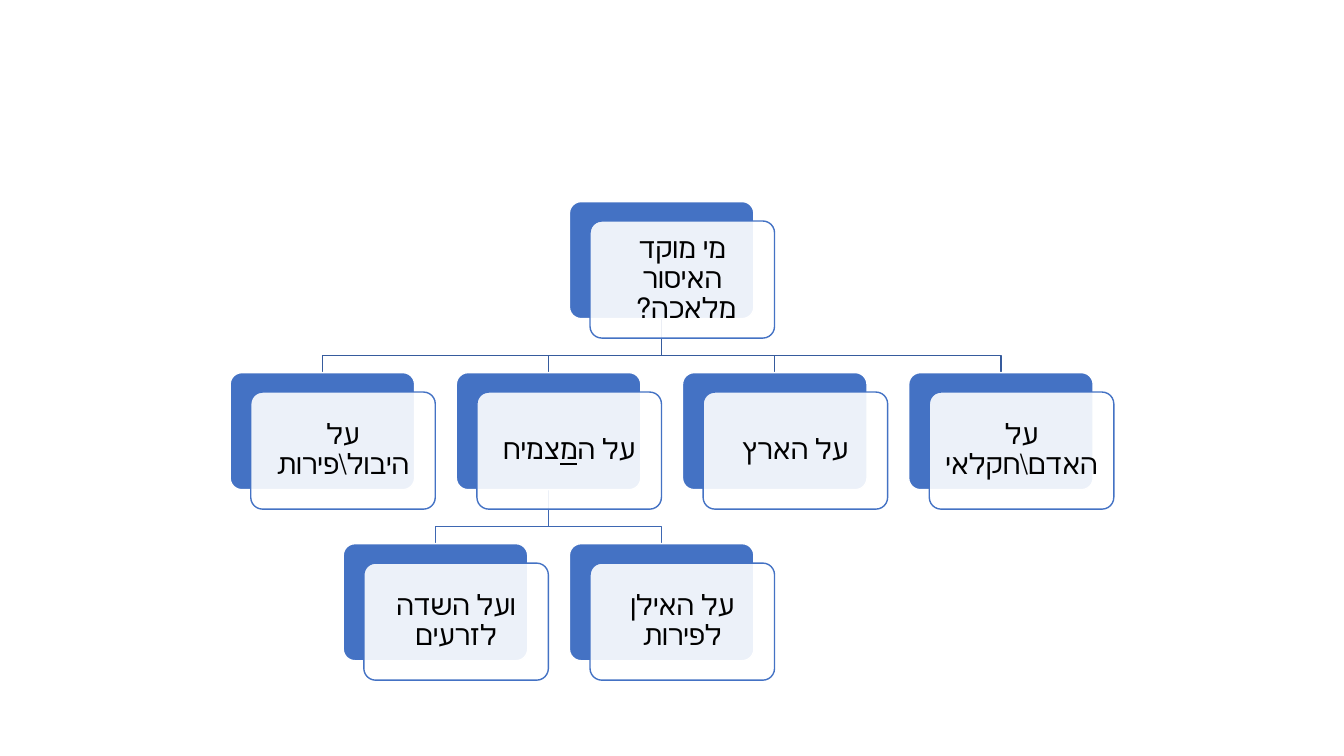
"""Build a Hebrew tree chart of layered cards on one slide."""
import pptx
import pptx.dml.color
import pptx.enum.lang
import pptx.enum.shapes
import pptx.enum.text
import pptx.oxml
import pptx.oxml.ns
import pptx.util
from pptx.util import Cm, Pt

NODES = {
    "root": (1.5, 0, ["מי מוקד האיסור מלאכה? "]),
    "man": (3, 1, ["על האדם\\חקלאי"]),
    "land": (2, 1, ["על הארץ"]),
    "plant": (1, 1, ["על ה", "מ", "צמיח"]),
    "tree": (1.5, 2, ["על האילן לפירות"]),
    "field": (0.5, 2, ["ועל השדה לזרעים"]),
    "crop": (0, 1, ["על היבול\\פירות"]),
}
MARKED = "מ"
LINKS = [
    ("root", "crop"), ("plant", "field"), ("plant", "tree"),
    ("root", "plant"), ("root", "land"), ("root", "man"),
]

THEME = {
    "blue": "4472C4", "white": "FFFFFF", "ink": "000000",
    "links": ["365B9D", "3E67B2"],
    "font": "Calibri", "size": Pt(20), "line": Pt(1),
}
LEFT, TOP = 5.8, 5.08
STEP_X, STEP_Y = 5.7, 4.31
WIDE, HIGH = 4.65, 2.95
SHIFT_X, SHIFT_Y = 0.52, 0.49
DROP = 0.93
PAD = 0.09
INSET = Cm(0.2)


def tint(code):
    return pptx.dml.color.RGBColor.from_string(code)


def place(name):
    col, row, _ = NODES[name]
    return LEFT + col * STEP_X, TOP + row * STEP_Y


def outline(shape, code):
    shape.shadow.inherit = False
    shape.line.color.rgb = tint(code)
    shape.line.width = THEME["line"]


def add_link(slide, parent, child):
    x, y = place(parent)
    end_x, end_y = place(child)
    x, end_x, y = x + WIDE / 2, end_x + WIDE / 2, y + HIGH
    path = [(x, y + DROP), (end_x, y + DROP), (end_x, end_y)]
    form = slide.shapes.build_freeform(Cm(x), Cm(y))
    form.add_line_segments([(Cm(a), Cm(b)) for a, b in path], close=False)
    shape = form.convert_to_shape()
    shape.fill.background()
    outline(shape, THEME["links"][NODES[parent][1]])


def add_card(slide, x, y, fill, line):
    kind = pptx.enum.shapes.MSO_SHAPE.ROUNDED_RECTANGLE
    card = slide.shapes.add_shape(kind, Cm(x), Cm(y), Cm(WIDE), Cm(HIGH))
    card.adjustments[0] = 0.1
    card.fill.solid()
    card.fill.fore_color.rgb = tint(fill)
    outline(card, line)
    return card


def fade(card, share):
    color = card.fill._xPr.find(".//" + pptx.oxml.ns.qn("a:srgbClr"))
    alpha = pptx.oxml.parse_xml(
        f'<a:alpha {pptx.oxml.ns.nsdecls("a")} val="{share * 1000}"/>')
    color.append(alpha)


def add_label(slide, x, y, parts):
    box = slide.shapes.add_textbox(
        Cm(x + PAD), Cm(y + PAD), Cm(WIDE - 2 * PAD), Cm(HIGH - 2 * PAD))
    frame = box.text_frame
    frame.word_wrap = True
    frame.vertical_anchor = pptx.enum.text.MSO_ANCHOR.MIDDLE
    frame.margin_left = frame.margin_right = INSET
    frame.margin_top = frame.margin_bottom = INSET
    para = frame.paragraphs[0]
    para.alignment = pptx.enum.text.PP_ALIGN.CENTER
    para.line_spacing = 0.9
    para._p.get_or_add_pPr().set("rtl", "1")
    for part in parts:
        run = para.add_run()
        run.text = part
        run.font.name = THEME["font"]
        run.font.size = THEME["size"]
        run.font.color.rgb = tint(THEME["ink"])
        run.font.underline = part == MARKED
        run.font.language_id = pptx.enum.lang.MSO_LANGUAGE_ID.HEBREW


def main():
    deck = pptx.Presentation()
    deck.slide_width, deck.slide_height = Cm(33.87), Cm(19.05)
    slide = deck.slides.add_slide(deck.slide_layouts[6])
    for parent, child in LINKS:
        add_link(slide, parent, child)
    for name, (_, _, parts) in NODES.items():
        x, y = place(name)
        add_card(slide, x, y, THEME["blue"], THEME["white"])
        x, y = x + SHIFT_X, y + SHIFT_Y
        front = add_card(slide, x, y, THEME["white"], THEME["blue"])
        fade(front, 90)
        add_label(slide, x, y, parts)
    deck.save("out.pptx")


if __name__ == "__main__":
    main()
